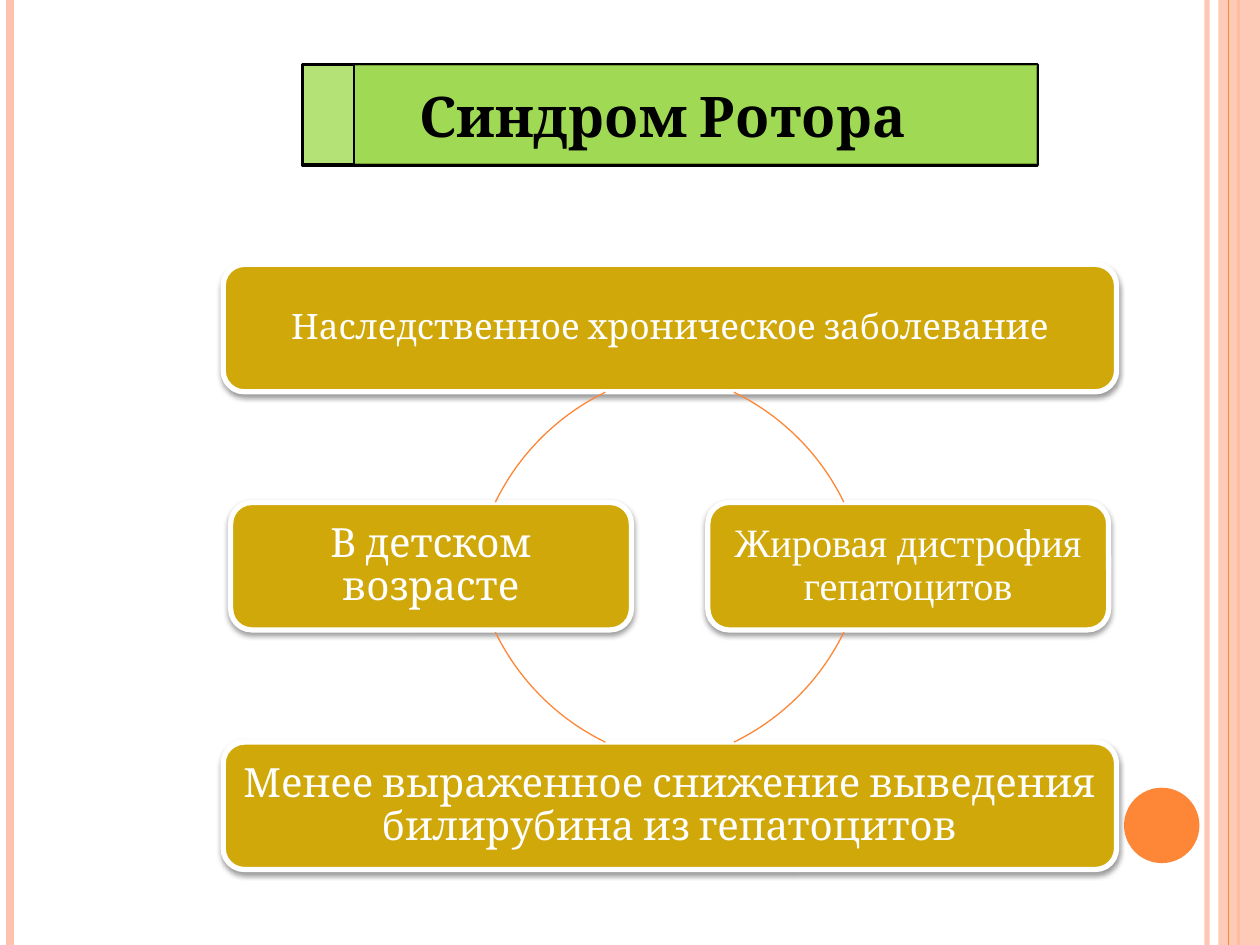
from lxml import etree
from pptx import Presentation
from pptx import util as u
from pptx.dml.color import RGBColor
from pptx.enum import shapes, text
from pptx.oxml import ns

WIDTH, HEIGHT = 25.4, 19.05
ORANGE, PALE, GREEN, GOLD = "FE8637", "FEC3AE", "9AD848", "D0A80A"
BLACK, WHITE = "000000", "FFFFFF"

CARD_HEIGHT = 2.57
CARDS = [  # left, top, width, text, size, font
    (4.5, 5.33, 18.01, "Наследственное хроническое заболевание", 20, "Cambria"),
    (14.27, 10.13, 8.08, "Жировая дистрофия гепатоцитов", 23, "Times New Roman"),
    (4.5, 14.96, 18.01,
     "Менее выраженное снижение выведения билирубина из гепатоцитов", 23, "Cambria"),
    (4.65, 10.13, 8.08, "В детском возрасте", 23, "Cambria"),
]
ARC_SIZE = 9.63
ARC_CORNERS = [(7.87, 5.82), (9.5, 5.82), (9.5, 7.42), (7.87, 7.42)]
ARC_START, ARC_SWEEP = 26, 38


def color(value):
    return RGBColor.from_string(value)


def set_values(target, values):
    for name, value in values.items():
        setattr(target, name, value)


def add_xml(parent, tag, **attributes):
    return etree.SubElement(parent, ns.qn(tag), attributes)


def set_alpha(paint, percent):
    """Make a solid fill, of a shape or a line, partly transparent."""
    for node in paint.iter(ns.qn("a:srgbClr")):
        add_xml(node, "a:alpha", val=str(percent * 1000))


def add_line(page, x, line_color, width, alpha=100):
    """Draw a vertical line over the full height."""
    line = page.shapes.add_connector(
        shapes.MSO_CONNECTOR.STRAIGHT, u.Cm(x), 0, u.Cm(x), u.Cm(HEIGHT))
    line.line.color.rgb = color(line_color)
    line.line.width = u.Pt(width)
    properties = line._element.spPr
    if alpha < 100:
        set_alpha(properties, alpha)
    add_xml(properties, "a:effectLst")


def add_shape(page, kind, left, top, width, height, fill=None, alpha=100, line=None):
    """Add a preset shape; line is a colour and a width in points."""
    shape = page.shapes.add_shape(
        kind, u.Cm(left), u.Cm(top), u.Cm(width), u.Cm(height))
    shape.shadow.inherit = False
    if fill:
        shape.fill.solid()
        shape.fill.fore_color.rgb = color(fill)
        if alpha < 100:
            set_alpha(shape._element.spPr, alpha)
    else:
        shape.fill.background()
    if line:
        shape.line.color.rgb = color(line[0])
        shape.line.width = u.Pt(line[1])
    else:
        shape.line.fill.background()
    return shape


def write(box, words, size, font, text_color, bold=False, spacing=1.0, **frame):
    set_values(box.text_frame, {"word_wrap": True, **frame})
    para = box.text_frame.paragraphs[0]
    set_values(para, {"alignment": text.PP_ALIGN.CENTER, "line_spacing": spacing})
    span = para.add_run()
    span.text = words
    set_values(span.font, {"size": u.Pt(size), "name": font, "bold": bold})
    span.font.color.rgb = color(text_color)


def add_card(page, left, top, width, words, size, font):
    card = add_shape(page, shapes.MSO_SHAPE.ROUNDED_RECTANGLE, left, top, width,
                     CARD_HEIGHT, GOLD, line=(WHITE, 3))
    effects = card._element.spPr.find(ns.qn("a:effectLst"))
    shadow = add_xml(effects, "a:outerShdw", blurRad=str(u.Pt(3.1)),
                     dist=str(u.Pt(1.6)), dir="5400000", rotWithShape="0")
    shade = add_xml(shadow, "a:srgbClr", val=BLACK)
    add_xml(shade, "a:alpha", val="38000")
    inset = u.Cm(0.12)
    write(card, words, size, font, WHITE, spacing=0.9,
          vertical_anchor=text.MSO_ANCHOR.MIDDLE,
          margin_left=inset, margin_right=inset,
          margin_top=inset, margin_bottom=inset)


def add_arc(page, left, top, start):
    arc = add_shape(page, shapes.MSO_SHAPE.ARC, left, top, ARC_SIZE, ARC_SIZE,
                    line=(ORANGE, 0.75))
    for index, angle in enumerate((start, start + ARC_SWEEP)):
        arc.adjustments[index] = angle * 0.6  # 60000 units a degree


def add_frame(page):
    """Decorate the side edges."""
    add_line(page, 24.33, PALE, 3, 93)
    add_line(page, 0.2, PALE, 4.5)
    add_line(page, 24.97, ORANGE, 1.5)
    add_shape(page, shapes.MSO_SHAPE.RECTANGLE, 24.56, 0, 0.84, HEIGHT, PALE, 87)
    add_line(page, 24.77, ORANGE, 0.75)
    add_shape(page, shapes.MSO_SHAPE.OVAL, 22.66, 15.88, 1.52, 1.52, ORANGE)


def add_title(page):
    top, height = 1.3, 2.03
    plate = add_shape(page, shapes.MSO_SHAPE.PENTAGON, 6.1, top, 14.81, height,
                      GREEN, 74, (BLACK, 2))
    plate.adjustments[0] = 0
    plate.rotation = 180
    add_shape(page, shapes.MSO_SHAPE.RECTANGLE, 7.14, top, 13.77, height,
              GREEN, 74, (BLACK, 0.75))
    box = page.shapes.add_textbox(u.Cm(3.1), u.Cm(1.52), u.Cm(20.52), u.Cm(1.63))
    write(box, "Синдром Ротора", 32, "Cambria", BLACK, bold=True)


def main():
    deck = Presentation()
    set_values(deck, {"slide_width": u.Cm(WIDTH), "slide_height": u.Cm(HEIGHT)})
    page = deck.slides.add_slide(deck.slide_layouts[6])
    add_frame(page)
    add_title(page)
    for card in CARDS:
        add_card(page, *card)
    for quarter, (left, top) in enumerate(ARC_CORNERS):
        add_arc(page, left, top, ARC_START + 90 * quarter)
    deck.save("out.pptx")


if __name__ == "__main__":
    main()
